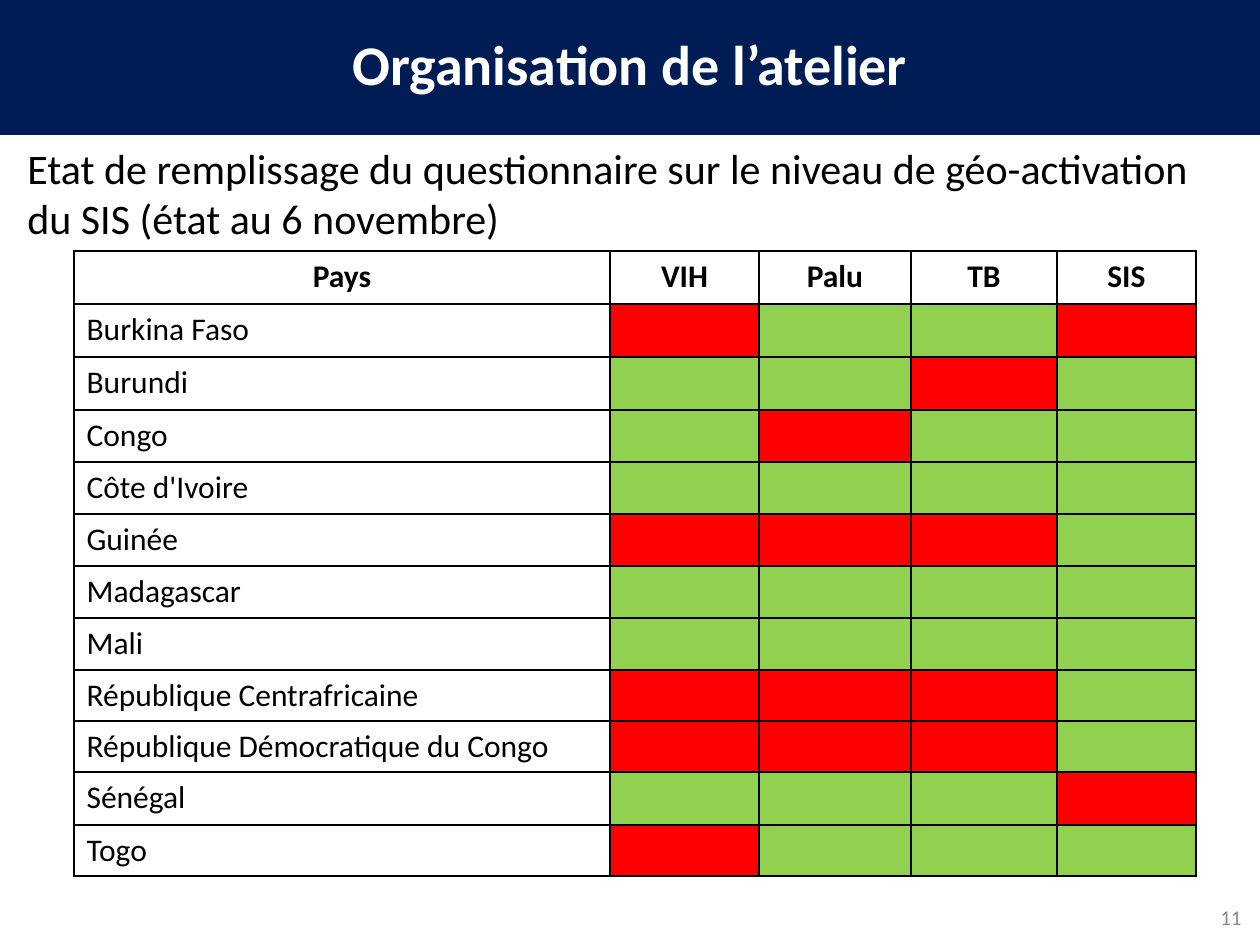
from dataclasses import dataclass

from lxml.etree import SubElement
from pptx import Presentation
from pptx.dml.color import RGBColor
from pptx.enum.shapes import MSO_SHAPE as Shape
from pptx.enum.text import MSO_ANCHOR as Anchor, PP_ALIGN as Align
from pptx.oxml.ns import qn
from pptx.util import Emu, Pt

SCALE = 914400 / 126  # EMU per px
FONT = "Calibri"
COLORS = {
    "navy": "001C54",
    "white": "FFFFFF",
    "black": "000000",
    "grey": "898989",
    "missing": "FF0000",
    "filled": "92D050",
}


@dataclass(frozen=True)
class Box:
    x: int
    y: int
    w: int
    h: int


@dataclass(frozen=True)
class Style:
    size: int
    color: str = "black"
    bold: bool = False
    align: Align = Align.LEFT
    anchor: Anchor = Anchor.TOP
    spacing: float = 1.0


@dataclass(frozen=True)
class Country:
    name: str
    status: str  # one mark per domain: x = missing, o = filled


HEADERS = ["Pays", "VIH", "Palu", "TB", "SIS"]
COUNTRIES = [
    Country("Burkina Faso", "xoox"),
    Country("Burundi", "ooxo"),
    Country("Congo", "oxoo"),
    Country("Côte d'Ivoire", "oooo"),
    Country("Guinée", "xxxo"),
    Country("Madagascar", "oooo"),
    Country("Mali", "oooo"),
    Country("République Centrafricaine", "xxxo"),
    Country("République Démocratique du Congo", "xxxo"),
    Country("Sénégal", "ooox"),
    Country("Togo", "xooo"),
]
MARKS = {"x": "missing", "o": "filled"}
COL_WIDTHS = [536, 149, 152, 146, 139]
ROW_HEIGHTS = [53] * 3 + [52] * 5 + [51, 51, 53, 51]


def px(n: int) -> Emu:
    return Emu(round(n * SCALE))


def rgb(name: str) -> RGBColor:
    return RGBColor.from_string(COLORS[name])


def place(box: Box) -> tuple:
    return px(box.x), px(box.y), px(box.w), px(box.h)


def write(tf, text: str, style: Style) -> None:
    p = tf.paragraphs[0]
    p.alignment, p.line_spacing = style.align, style.spacing
    r = p.add_run()
    r.text = text
    values = {"name": FONT, "size": Pt(style.size), "bold": style.bold}
    for key, value in values.items():
        setattr(r.font, key, value)
    r.font.color.rgb = rgb(style.color)


def write_frame(tf, text: str, style: Style) -> None:
    tf.word_wrap = True
    tf.vertical_anchor = style.anchor
    write(tf, text, style)


def add_text(slide, box: Box, text: str, style: Style) -> None:
    write_frame(slide.shapes.add_textbox(*place(box)).text_frame, text, style)


def add_header(slide, title: str) -> None:
    # Navy band, kept behind the title
    band = slide.shapes.add_shape(Shape.RECTANGLE, *place(Box(0, 0, 1260, 135)))
    band.shadow.inherit = False
    band.fill.solid()
    band.fill.fore_color.rgb = rgb("navy")
    band.line.fill.background()
    sp = slide.shapes.title
    sp.element.addprevious(band.element)
    sp.left, sp.top, sp.width, sp.height = place(Box(87, -24, 1086, 183))
    write_frame(sp.text_frame, title,
                Style(32, "white", True, Align.CENTER, Anchor.MIDDLE, 0.9))


def set_borders(cell) -> None:
    tc_pr = cell._tc.get_or_add_tcPr()
    for side in ("lnL", "lnR", "lnT", "lnB"):
        ln = SubElement(tc_pr, qn(f"a:{side}"), w=str(Pt(1)))
        fill = SubElement(ln, qn("a:solidFill"))
        SubElement(fill, qn("a:srgbClr"), val=COLORS["black"])


def add_status_table(slide, x: int, y: int) -> None:
    box = Box(x, y, sum(COL_WIDTHS), sum(ROW_HEIGHTS))
    table = slide.shapes.add_table(len(ROW_HEIGHTS), len(COL_WIDTHS), *place(box)).table
    table.first_row = table.horz_banding = False
    for col, width in zip(table.columns, COL_WIDTHS):
        col.width = px(width)
    for row, height in zip(table.rows, ROW_HEIGHTS):
        row.height = px(height)
    for cell in table.iter_cells():
        set_borders(cell)
        cell.fill.background()

    # Heading row
    for c, text in enumerate(HEADERS):
        write(table.cell(0, c).text_frame, text,
              Style(18, bold=True, align=Align.CENTER))

    # One row per country, one coloured cell per domain
    for r, country in enumerate(COUNTRIES, 1):
        write(table.cell(r, 0).text_frame, country.name, Style(18))
        for c, mark in enumerate(country.status, 1):
            fill = table.cell(r, c).fill
            fill.solid()
            fill.fore_color.rgb = rgb(MARKS[mark])


def main() -> None:
    prs = Presentation()
    prs.slide_width, prs.slide_height = px(1260), px(945)
    slide = prs.slides.add_slide(prs.slide_layouts[5])

    add_header(slide, "Organisation de l’atelier")
    add_text(slide, Box(970, 892, 284, 50), "11",
             Style(12, "grey", align=Align.RIGHT, anchor=Anchor.MIDDLE))
    add_status_table(slide, 74, 251)
    add_text(slide, Box(15, 136, 1193, 115),
             "Etat de remplissage du questionnaire sur le niveau de "
             "géo-activation du SIS (état au 6 novembre)", Style(24))

    prs.save("out.pptx")


if __name__ == "__main__":
    main()
